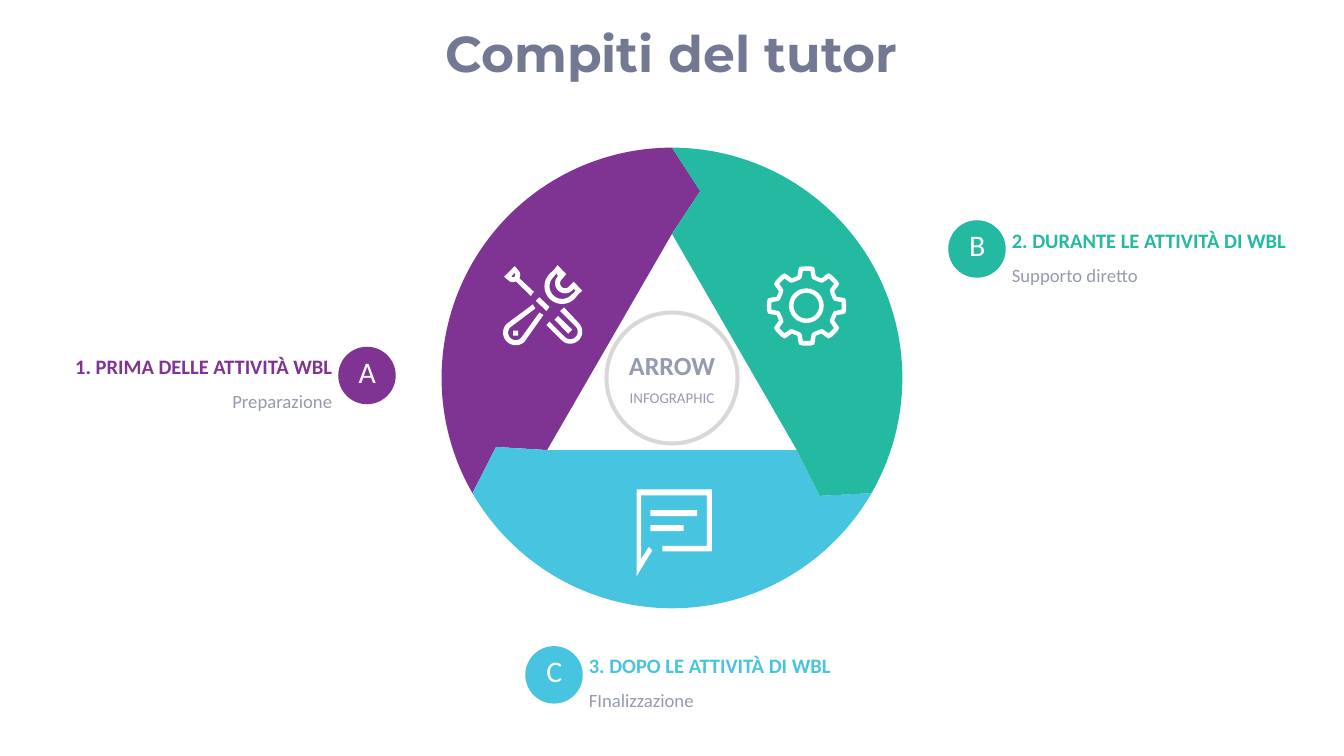
import math
import pptx
import pptx.dml.color
import pptx.enum.shapes
import pptx.enum.text
import pptx.util

Inches = pptx.util.Inches
ALIGN = pptx.enum.text.PP_ALIGN
ANCHOR = pptx.enum.text.MSO_ANCHOR
AUTO_SIZE = pptx.enum.text.MSO_AUTO_SIZE
SHAPE = pptx.enum.shapes.MSO_SHAPE

# Content
TITLE = "Compiti del tutor"
HUB_LINES = [("ARROW", "hub", 6.93, 0.63), ("INFOGRAPHIC", "hub_note", 7.71, 0.36)]
# letter, heading, detail, colour, badge corner, label left, alignment
STEPS = [
    ("A", "1. PRIMA DELLE ATTIVITÀ WBL", "Preparazione", "purple", (6.71, 6.88), 1.04, ALIGN.RIGHT),
    ("B", "2. DURANTE LE ATTIVITÀ DI WBL", "Supporto diretto", "teal", (18.81, 4.37), 20.07, ALIGN.LEFT),
    ("C", "3. DOPO LE ATTIVITÀ DI WBL", "FInalizzazione", "sky", (10.42, 12.82), 11.68, ALIGN.LEFT),
]
SEGMENT_TURNS = {"purple": 240, "sky": 120, "teal": 0}

THEME = {
    "colours": {"slate": "747993", "grey": "969AAE", "ring": "D8D8D8", "white": "FFFFFF",
                "purple": "7F3494", "teal": "24BAA2", "sky": "47C4E0"},
    "fonts": {
        "title": {"name": "Montserrat", "size": pptx.util.Pt(72), "bold": True},
        "hub": {"name": "Calibri", "size": pptx.util.Pt(37.3), "bold": True},
        "hub_note": {"name": "Calibri", "size": pptx.util.Pt(21.3), "bold": False},
        "heading": {"name": "Calibri", "size": pptx.util.Pt(29.3), "bold": True},
        "detail": {"name": "Calibri", "size": pptx.util.Pt(26.7), "bold": False},
        "badge": {"name": "Calibri", "size": pptx.util.Pt(42.7), "bold": False},
    },
}

# Wheel geometry
CENTRE = (13.33, 7.5)
OUTER_R, TIP_R, INNER_R = 4.57, 3.75, 2.86
TIP_LEAD = 8.6
HUB_SIZE, HUB_LINE = 2.68, 0.08
BADGE_SIZE = 1.14


def rgb(name):
    return pptx.dml.color.RGBColor.from_string(THEME["colours"][name])


def polar(centre, radius, degrees):
    angle = math.radians(degrees)
    return centre[0] + radius * math.cos(angle), centre[1] + radius * math.sin(angle)


def arc(centre, radius, start, end, steps=24):
    return [polar(centre, radius, start + (end - start) * i / steps) for i in range(steps + 1)]


def paint(shape, colour):
    shape.shadow.inherit = False
    shape.fill.solid()
    shape.fill.fore_color.rgb = rgb(colour)
    shape.line.fill.background()
    return shape


def add_outline(shapes, contours, colour):
    """Draw closed contours as one freeform; later contours cut holes."""
    emu = [[(Inches(x), Inches(y)) for x, y in contour] for contour in contours]
    builder = shapes.build_freeform(*emu[0][0], scale=1.0)
    builder.add_line_segments(emu[0][1:], close=True)
    for hole in emu[1:]:
        builder.move_to(*hole[0])
        builder.add_line_segments(hole[1:], close=True)
    return paint(builder.convert_to_shape(), colour)


def add_preset(shapes, kind, left, top, width, height, colour):
    return paint(shapes.add_shape(kind, *map(Inches, (left, top, width, height))), colour)


def add_text(shapes, box, lines, align, spacing=1.0, insets=(0, 0),
             anchor=ANCHOR.TOP, auto_size=AUTO_SIZE.SHAPE_TO_FIT_TEXT):
    """Lines are (text, font key, colour)."""
    frame = shapes.add_textbox(*map(Inches, box)).text_frame
    side, end = map(Inches, insets)
    layout = {"word_wrap": True, "auto_size": auto_size, "vertical_anchor": anchor,
              "margin_left": side, "margin_right": side, "margin_top": end, "margin_bottom": end}
    for name, value in layout.items():
        setattr(frame, name, value)
    for i, (text, font_key, colour) in enumerate(lines):
        paragraph = frame.add_paragraph() if i else frame.paragraphs[0]
        paragraph.alignment = align
        paragraph.line_spacing = spacing
        run = paragraph.add_run()
        run.text = text
        for name, value in THEME["fonts"][font_key].items():
            setattr(run.font, name, value)
        run.font.color.rgb = rgb(colour)


def add_segment(shapes, turn, colour):
    start, end = turn - 90, turn + 30
    notch = [polar(CENTRE, radius, angle) for radius, angle in
             [(TIP_R, end + TIP_LEAD), (INNER_R, end), (INNER_R, start), (TIP_R, start + TIP_LEAD)]]
    add_outline(shapes, [arc(CENTRE, OUTER_R, start, end, 80) + notch], colour)


def add_gear(shapes):
    centre = (16, 6.07)
    # One tooth as (radius, angle from its axis)
    rim = [(0.62, 17), (0.73, 13), (0.78, 11), (0.79, 6)]
    inside = [(0.54, 14.5), (0.56, 10.5), (0.7, 6)]
    contours = []
    for half in (rim, inside):
        tooth = [(r, -a) for r, a in half] + half[::-1]
        contours.append([polar(centre, r, 45 * k + a) for k in range(8) for r, a in tooth])
    add_outline(shapes, contours, "white")
    hub = add_preset(shapes, SHAPE.DONUT, 15.65, 5.72, 0.69, 0.69, "white")
    hub.adjustments[0] = 0.13


def add_speech_bubble(shapes):
    add_outline(shapes, [[
        (12.63, 11.43), (12.63, 9.71), (14.12, 9.71), (14.12, 10.94), (13.14, 10.94), (13.14, 10.83),
        (14.02, 10.83), (14.02, 9.83), (12.72, 9.83), (12.72, 11.09), (12.87, 10.85), (12.94, 10.92),
    ]], "white")
    for top, width in [(10.12, 0.93), (10.42, 0.66)]:
        add_preset(shapes, SHAPE.RECTANGLE, 12.9, top, width, 0.12, "white")


def add_tools(shapes):
    grip, jaw, mouth, handle = (11.31, 6.58), (11.15, 5.68), (11.21, 5.62), (10.23, 6.6)
    screwdriver_tip = [
        [(10, 5.49), (10.21, 5.28), (10.27, 5.35), (10.31, 5.4), (10.32, 5.45), (10.31, 5.51),
         (10.27, 5.55), (10.22, 5.59), (10.17, 5.6), (10.12, 5.59), (10.07, 5.55)],
        [(10.14, 5.49), (10.18, 5.5), (10.21, 5.49), (10.22, 5.45), (10.21, 5.41)],
    ]
    screwdriver_shaft = [(10.53, 5.87), (10.21, 5.56), (10.27, 5.49), (10.59, 5.79)]
    screwdriver_handle = (arc(handle, 0.25, 45, 225) + [(10.57, 6.04), (10.62, 6.12)]
                          + arc(handle, 0.15, 225, 45) + [(10.7, 6.2), (10.78, 6.25)])
    wrench_groove = [(11.27, 6.62), (11, 6.34), (11.07, 6.27), (11.35, 6.54)]
    wrench_grip = ([(10.84, 6.45), (10.9, 6.38)] + arc(grip, 0.15, 135, -45)
                   + [(11.11, 6.17), (11.19, 6.1)] + arc(grip, 0.24, -45, 135))
    wrench_jaw = ([(11, 5.34), (11.06, 5.4)] + arc(jaw, 0.25, 225, 45)
                  + [(11.42, 5.77), (11.48, 5.83)] + arc(jaw, 0.35, 45, 225))
    wrench_mouth = ([(11.48, 5.83), (11.38, 5.73)] + arc(mouth, 0.2, 45, 225)
                    + [(11, 5.34), (11.06, 5.26), (11.23, 5.44)] + arc(mouth, 0.1, 225, 45)
                    + [(11.38, 5.59), (11.55, 5.77)])
    crossing = [(10.84, 6.17), (10.63, 5.97), (10.7, 5.9), (10.9, 6.09)]
    add_outline(shapes, screwdriver_tip, "white")
    for part in (screwdriver_shaft, screwdriver_handle, wrench_groove, wrench_grip,
                 wrench_jaw, wrench_mouth, crossing):
        add_outline(shapes, [part], "white")
    add_preset(shapes, SHAPE.RECTANGLE, 10.18, 6.56, 0.1, 0.1, "white")


def main():
    deck = pptx.Presentation()
    deck.slide_width, deck.slide_height = Inches(26.66), Inches(15)
    shapes = deck.slides.add_slide(deck.slide_layouts[6]).shapes

    # Title
    add_text(shapes, (1.11, 0.39, 24.4, 1.44), [(TITLE, "title", "slate")], ALIGN.CENTER,
             spacing=0.9, anchor=ANCHOR.MIDDLE, auto_size=AUTO_SIZE.NONE)

    # Hub ring and arrow segments
    corner = [c - HUB_SIZE / 2 for c in CENTRE]
    ring = add_preset(shapes, SHAPE.DONUT, *corner, HUB_SIZE, HUB_SIZE, "ring")
    ring.adjustments[0] = HUB_LINE / HUB_SIZE
    for colour, turn in SEGMENT_TURNS.items():
        add_segment(shapes, turn, colour)

    # Hub text
    for text, font_key, top, height in HUB_LINES:
        add_text(shapes, (12.03, top, 2.6, height), [(text, font_key, "grey")], ALIGN.CENTER)

    # Step labels and badges
    for letter, heading, detail, colour, (left, top), label_left, align in STEPS:
        add_text(shapes, (label_left, top - 0.1, 5.55, 1.41),
                 [(heading, "heading", colour), (detail, "detail", "grey")], align, spacing=1.5)
        add_preset(shapes, SHAPE.OVAL, left, top, BADGE_SIZE, BADGE_SIZE, colour)
        add_text(shapes, (left + 0.3, top + 0.08, 0.55, 0.82), [(letter, "badge", "white")],
                 ALIGN.CENTER, insets=(0.1, 0.05))

    # Icons, one group each
    for add_icon in (add_gear, add_speech_bubble, add_tools):
        add_icon(shapes.add_group_shape().shapes)

    deck.save("out.pptx")


if __name__ == "__main__":
    main()
